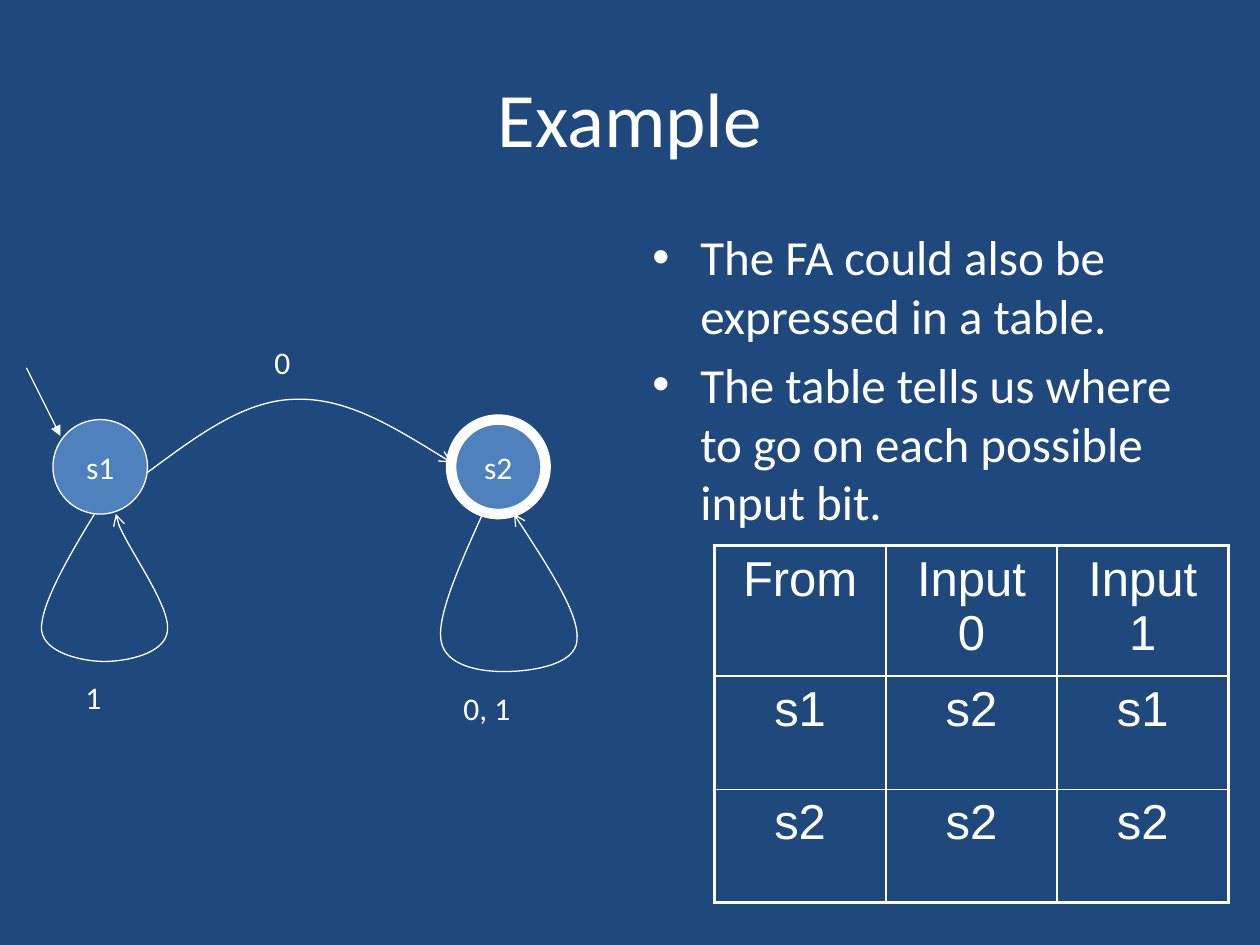
from dataclasses import dataclass

from lxml import etree
from pptx import Presentation
from pptx import util as u
from pptx.dml.color import RGBColor
from pptx.enum import shapes, text
from pptx.oxml import ns


@dataclass(frozen=True)
class Theme:
    background = RGBColor(0x1F, 0x49, 0x7D)
    ink = RGBColor(0xFF, 0xFF, 0xFF)
    state = RGBColor(0x4F, 0x81, 0xBD)
    font = "Calibri"
    table_font = "Arial"
    title_size = u.Pt(44)
    body_size = u.Pt(28)
    label_size = u.Pt(18)
    thin = u.Pt(0.75)
    accepting = u.Pt(6)
    grid = u.Pt(1)
    frame = u.Pt(2.25)


@dataclass(frozen=True)
class Box:
    left: float
    top: float
    width: float
    height: float

    def inner(self, left, top, width, height):
        return Box(self.left + left, self.top + top, width, height)

    def point(self, x, y):
        return u.Inches(self.left + x), u.Inches(self.top + y)

    def emu(self):
        return [u.Inches(v) for v in (self.left, self.top, self.width, self.height)]


THEME = Theme()


def write(frame, lines, size, font=THEME.font, align=text.PP_ALIGN.LEFT):
    frame.text = "\n".join(lines)
    for paragraph in frame.paragraphs:
        paragraph.alignment = align
        for run in paragraph.runs:
            run.font.size = size
            run.font.name = font
            run.font.color.rgb = THEME.ink


def add_text(slide, box, lines, size, align=text.PP_ALIGN.LEFT):
    frame = slide.shapes.add_textbox(*box.emu()).text_frame
    frame.word_wrap = True
    write(frame, lines, size, align=align)
    return frame


def style_arrow(arrow, head):
    arrow.line.color.rgb = THEME.ink
    arrow.line.width = THEME.thin
    etree.SubElement(arrow.line._get_or_add_ln(), ns.qn("a:tailEnd"), type=head)


# Title
def add_title(slide, box):
    frame = add_text(slide, box, ["Example"], THEME.title_size, text.PP_ALIGN.CENTER)
    frame.vertical_anchor = text.MSO_ANCHOR.MIDDLE


# Bulleted explanation
def add_explanation(slide, box):
    frame = add_text(slide, box, [
        "The FA could also be expressed in a table.",
        "The table tells us where to go on each possible input bit.",
    ], THEME.body_size)
    indent = u.Inches(0.38)
    for number, paragraph in enumerate(frame.paragraphs):
        if number:
            paragraph.space_before = u.Pt(5.6)
        properties = paragraph._p.get_or_add_pPr()
        properties.set("marL", str(indent))
        properties.set("indent", str(-indent))
        etree.SubElement(properties, ns.qn("a:buFont"), typeface=THEME.table_font)
        etree.SubElement(properties, ns.qn("a:buChar"), char="•")


# Transition table
def set_border(cell, side, width):
    border = etree.SubElement(cell._tc.get_or_add_tcPr(), ns.qn(f"a:ln{side}"), w=str(width))
    fill = etree.SubElement(border, ns.qn("a:solidFill"))
    etree.SubElement(fill, ns.qn("a:srgbClr"), val=str(THEME.ink))


def add_transition_table(slide, box):
    rows = [
        ("From", "Input 0", "Input 1"),
        ("s1", "s2", "s1"),
        ("s2", "s2", "s2"),
    ]
    last = len(rows) - 1
    table = slide.shapes.add_table(len(rows), len(rows[0]), *box.emu()).table
    table.first_row = table.horz_banding = False
    for column in table.columns:
        column.width = u.Inches(box.width / len(rows[0]))
    for r, values in enumerate(rows):
        table.rows[r].height = u.Inches(box.height / len(rows))
        for c, value in enumerate(values):
            cell = table.cell(r, c)
            write(cell.text_frame, [value], THEME.body_size, THEME.table_font,
                  text.PP_ALIGN.CENTER)
            outer = {"L": c == 0, "R": c == last, "T": r == 0, "B": r == last}
            for side, is_outer in outer.items():
                set_border(cell, side, THEME.frame if is_outer else THEME.grid)
            cell.fill.background()


# State diagram
def add_state(slide, box, name, line_width):
    state = slide.shapes.add_shape(shapes.MSO_SHAPE.OVAL, *box.emu())
    state.shadow.inherit = False
    state.fill.solid()
    state.fill.fore_color.rgb = THEME.state
    state.line.color.rgb = THEME.ink
    state.line.width = line_width
    state.text_frame.word_wrap = False
    state.text_frame.vertical_anchor = text.MSO_ANCHOR.MIDDLE
    write(state.text_frame, [name], THEME.label_size, align=text.PP_ALIGN.CENTER)


def add_curved_arrow(slide, box, points):
    """Draw a Bézier chain: a start, then two controls and an end per piece."""
    start, *rest = [box.point(x, y) for x, y in points]
    builder = slide.shapes.build_freeform(*start)
    builder.add_line_segments(rest, close=False)
    curve = builder.convert_to_shape()
    curve.shadow.inherit = False
    curve.fill.background()
    style_arrow(curve, "arrow")
    segments = list(curve._element.iter(ns.qn("a:lnTo")))
    for i in range(0, len(segments), 3):
        bezier = etree.Element(ns.qn("a:cubicBezTo"))
        segments[i].addprevious(bezier)
        for segment in segments[i:i + 3]:
            bezier.append(segment[0])
            segment.getparent().remove(segment)


def add_start_arrow(slide, box):
    arrow = slide.shapes.add_connector(
        shapes.MSO_CONNECTOR.STRAIGHT, *box.point(0.21, 0.42), *box.point(0.48, 0.96))
    style_arrow(arrow, "triangle")
    etree.SubElement(arrow._element.spPr, ns.qn("a:effectLst"))


def add_state_diagram(slide, box):
    for name, left, line_width in (("s1", 0.42, THEME.thin), ("s2", 3.58, THEME.accepting)):
        add_state(slide, box.inner(left, 0.83, 0.75, 0.75), name, line_width)

    add_start_arrow(slide, box)
    transitions = [
        # s1 to s2
        [(1.17, 1.25), (1.55, 0.97), (1.93, 0.68), (2.33, 0.67),
         (2.74, 0.65), (3.16, 0.91), (3.58, 1.17)],
        # s1 to itself
        [(0.75, 1.58), (0.53, 1.94), (0.32, 2.31), (0.33, 2.5),
         (0.35, 2.69), (0.67, 2.75), (0.83, 2.75),
         (1, 2.75), (1.32, 2.69), (1.33, 2.5),
         (1.35, 2.31), (0.92, 1.72), (0.92, 1.58)],
        # s2 to itself
        [(3.83, 1.58), (3.65, 1.98), (3.47, 2.38), (3.5, 2.58),
         (3.53, 2.79), (3.82, 2.83), (4, 2.83),
         (4.18, 2.83), (4.57, 2.79), (4.58, 2.58),
         (4.6, 2.38), (4.34, 1.98), (4.08, 1.58)],
    ]
    for points in transitions:
        add_curved_arrow(slide, box, points)

    for inputs, left, top, width in (
            ("1", 0.58, 2.83, 0.33), ("0, 1", 3.58, 2.92, 1), ("0", 2.08, 0.17, 0.58)):
        add_text(slide, box.inner(left, top, width, 0.4), [inputs], THEME.label_size)


def main():
    deck = Presentation()
    deck.slide_width, deck.slide_height = u.Inches(10), u.Inches(7.5)
    slide = deck.slides.add_slide(deck.slide_layouts[6])
    slide.background.fill.solid()
    slide.background.fill.fore_color.rgb = THEME.background

    add_title(slide, Box(0.5, 0.3, 9, 1.25))
    add_explanation(slide, Box(5.08, 1.75, 4.42, 4.95))
    add_transition_table(slide, Box(5.67, 4.33, 4.08, 2.7))
    add_state_diagram(slide, Box(0, 2.5, 5, 3.5))
    deck.save("out.pptx")


if __name__ == "__main__":
    main()
